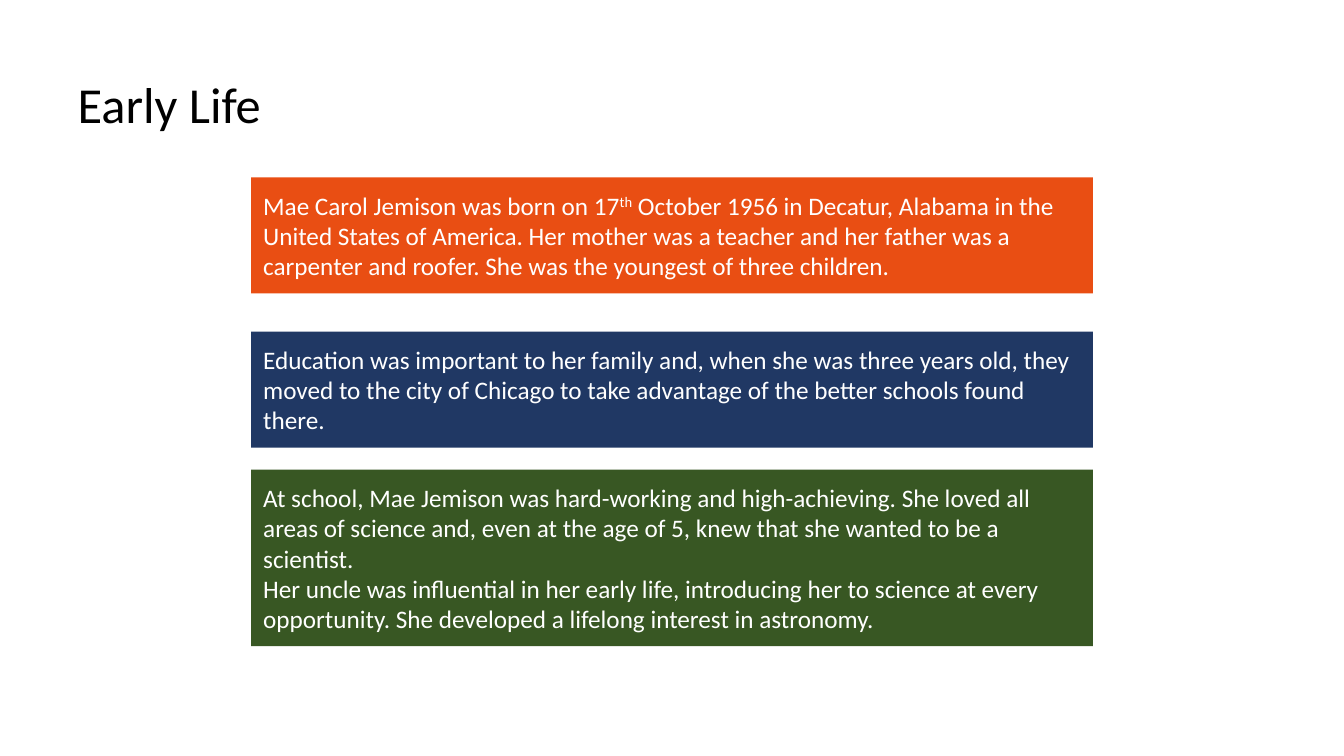
from pptx import Presentation
from pptx.dml.color import RGBColor
from pptx.enum.shapes import MSO_SHAPE as Shape
from pptx.enum.text import MSO_ANCHOR as Anchor, MSO_AUTO_SIZE as AutoSize, PP_ALIGN as Align
from pptx.util import Inches, Pt

BLACK = RGBColor(0x00, 0x00, 0x00)
WHITE = RGBColor(0xFF, 0xFF, 0xFF)
ORANGE = RGBColor(0xE9, 0x4E, 0x13)
NAVY = RGBColor(0x20, 0x38, 0x64)
GREEN = RGBColor(0x38, 0x57, 0x23)

FONT = "Calibri"
FACT_LEFT, FACT_WIDTH = 2.49, 8.35
FACT_INSET = Inches(0.12)

# Each fact: top, height, fill, paragraphs; "^" marks the ends of a superscript
FACTS = [
    (1.76, 1.15, ORANGE, [
        "Mae Carol Jemison was born on 17^th^ October 1956 in Decatur, Alabama in the "
        "United States of America. Her mother was a teacher and her father was a "
        "carpenter and roofer. She was the youngest of three children."]),
    (3.29, 1.15, NAVY, [
        "Education was important to her family and, when she was three years old, they "
        "moved to the city of Chicago to take advantage of the better schools found there."]),
    (4.66, 1.75, GREEN, [
        "At school, Mae Jemison was hard-working and high-achieving. She loved all areas "
        "of science and, even at the age of 5, knew that she wanted to be a scientist.",
        "Her uncle was influential in her early life, introducing her to science at every "
        "opportunity. She developed a lifelong interest in astronomy."]),
]


def write_text(para, text, size=18, color=WHITE, line_spacing=1.0):
    para.alignment = Align.LEFT
    para.line_spacing = line_spacing
    for index, part in enumerate(text.split("^")):
        span = para.add_run()
        span.text = part
        span.font.name = FONT
        span.font.size = Pt(size)
        span.font.bold = False
        span.font.color.rgb = color
        if index % 2:
            span.font._element.set("baseline", "30000")


def place(shape, left, top, width, height):
    shape.left, shape.top = Inches(left), Inches(top)
    shape.width, shape.height = Inches(width), Inches(height)


def add_title(page, text, box):
    title = page.shapes.title
    place(title, *box)
    frame = title.text_frame
    frame.word_wrap = True
    frame.vertical_anchor = Anchor.MIDDLE
    write_text(frame.paragraphs[0], text, size=36, color=BLACK, line_spacing=0.9)


def add_fact(page, paragraphs, fill, box):
    panel = page.shapes.add_shape(Shape.RECTANGLE, *map(Inches, box))
    panel.shadow.inherit = False
    panel.fill.solid()
    panel.fill.fore_color.rgb = fill
    panel.line.fill.background()
    frame = panel.text_frame
    frame.word_wrap = True
    frame.auto_size = AutoSize.SHAPE_TO_FIT_TEXT
    frame.vertical_anchor = Anchor.MIDDLE
    frame.margin_left = frame.margin_right = FACT_INSET
    frame.margin_top = frame.margin_bottom = FACT_INSET
    for index, text in enumerate(paragraphs):
        para = frame.add_paragraph() if index else frame.paragraphs[0]
        write_text(para, text)


def main():
    deck = Presentation()
    deck.slide_width, deck.slide_height = Inches(13.33), Inches(7.5)
    page = deck.slides.add_slide(deck.slide_layouts[5])

    # Heading
    add_title(page, "Early Life", (0.67, 0.52, 11.99, 1.09))

    # Coloured fact panels
    for top, height, fill, paragraphs in FACTS:
        add_fact(page, paragraphs, fill, (FACT_LEFT, top, FACT_WIDTH, height))

    deck.save("out.pptx")


if __name__ == "__main__":
    main()
